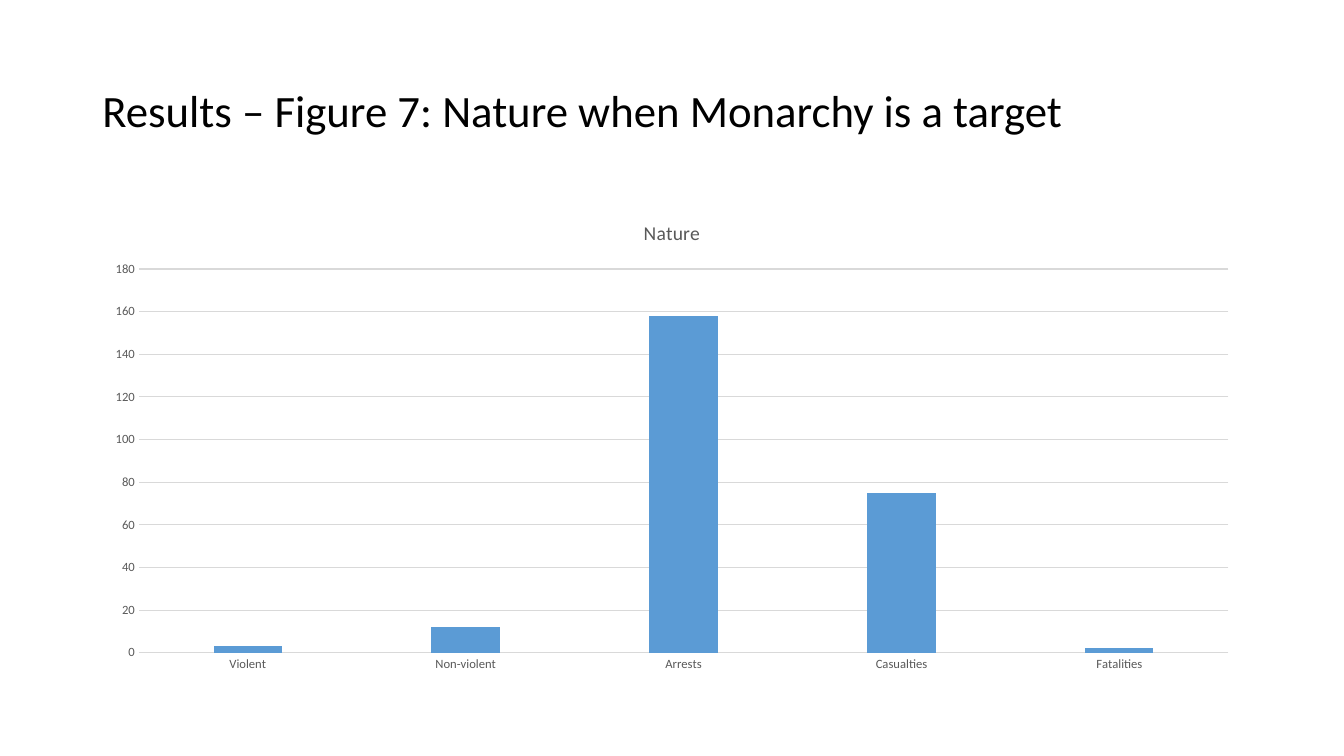
from pptx import Presentation
from pptx.chart.data import CategoryChartData
from pptx.dml.color import RGBColor
from pptx.enum.chart import XL_CHART_TYPE, XL_TICK_MARK
from pptx.enum.text import MSO_ANCHOR
from pptx.util import Cm, Pt

COLUMN = XL_CHART_TYPE.COLUMN_CLUSTERED
NO_TICK = XL_TICK_MARK.NONE
MIDDLE = MSO_ANCHOR.MIDDLE
FONT = "Calibri"
BLACK, GREY, RULE, BLUE = "000000", "595959", "D9D9D9", "5B9BD5"
COUNTS = {"Violent": 3, "Non-violent": 12, "Arrests": 158,
          "Casualties": 75, "Fatalities": 2}


def paint(value):
    """Turn a hex string into a colour."""
    return RGBColor.from_string(value)


def style(font, size, color):
    """Set the face, size and colour of a font."""
    font.name, font.size, font.bold = FONT, Pt(size), False
    font.color.rgb = paint(color)


def write(frame, text, size=14, color=BLACK, spacing=None):
    """Put one formatted paragraph into a text frame."""
    para = frame.paragraphs[0]
    para.line_spacing = spacing
    run = para.add_run()
    run.text = text
    style(run.font, size, color)


def rule(line):
    """Give a chart line its thin grey look."""
    line.color.rgb = paint(RULE)
    line.width = Pt(0.75)


def add_title(slide, left, top, width, height):
    """Place the slide title in its box."""
    frame = slide.shapes.add_textbox(left, top, width, height).text_frame
    frame.word_wrap = True
    frame.vertical_anchor = MIDDLE
    write(frame, "Results – Figure 7: Nature when Monarchy is a target",
          size=32, spacing=0.9)


def add_columns(slide, left, top, width, height):
    """Place the column chart in its box."""
    data = CategoryChartData()
    data.categories = list(COUNTS)
    data.add_series("Series 1", list(COUNTS.values()))
    chart = slide.shapes.add_chart(COLUMN, left, top, width, height, data).chart
    style(chart.font, 10, BLACK)
    chart.has_legend = False
    chart.has_title = True
    write(chart.chart_title.text_frame, "Nature", color=GREY)
    chart.chart_title.include_in_layout = False

    plot = chart.plots[0]
    plot.vary_by_categories = False
    plot.gap_width, plot.overlap = 219, -27
    fill = plot.series[0].format.fill
    fill.solid()
    fill.fore_color.rgb = paint(BLUE)

    names, scale = chart.category_axis, chart.value_axis
    for axis in (names, scale):
        axis.major_tick_mark = axis.minor_tick_mark = NO_TICK
        style(axis.tick_labels.font, 9, GREY)
    rule(names.format.line)
    scale.format.line.fill.background()
    scale.minimum_scale, scale.maximum_scale, scale.major_unit = 0, 180, 20
    rule(scale.major_gridlines.format.line)


def main():
    """Build and save the slide."""
    deck = Presentation()
    deck.slide_width, deck.slide_height = Cm(33.87), Cm(19.05)
    slide = deck.slides.add_slide(deck.slide_layouts[6])
    left, width = Cm(2.33), Cm(29.21)
    add_title(slide, left, Cm(1.01), width, Cm(3.68))
    add_columns(slide, left, Cm(5.07), width, Cm(12.09))
    deck.save("out.pptx")


if __name__ == "__main__":
    main()
